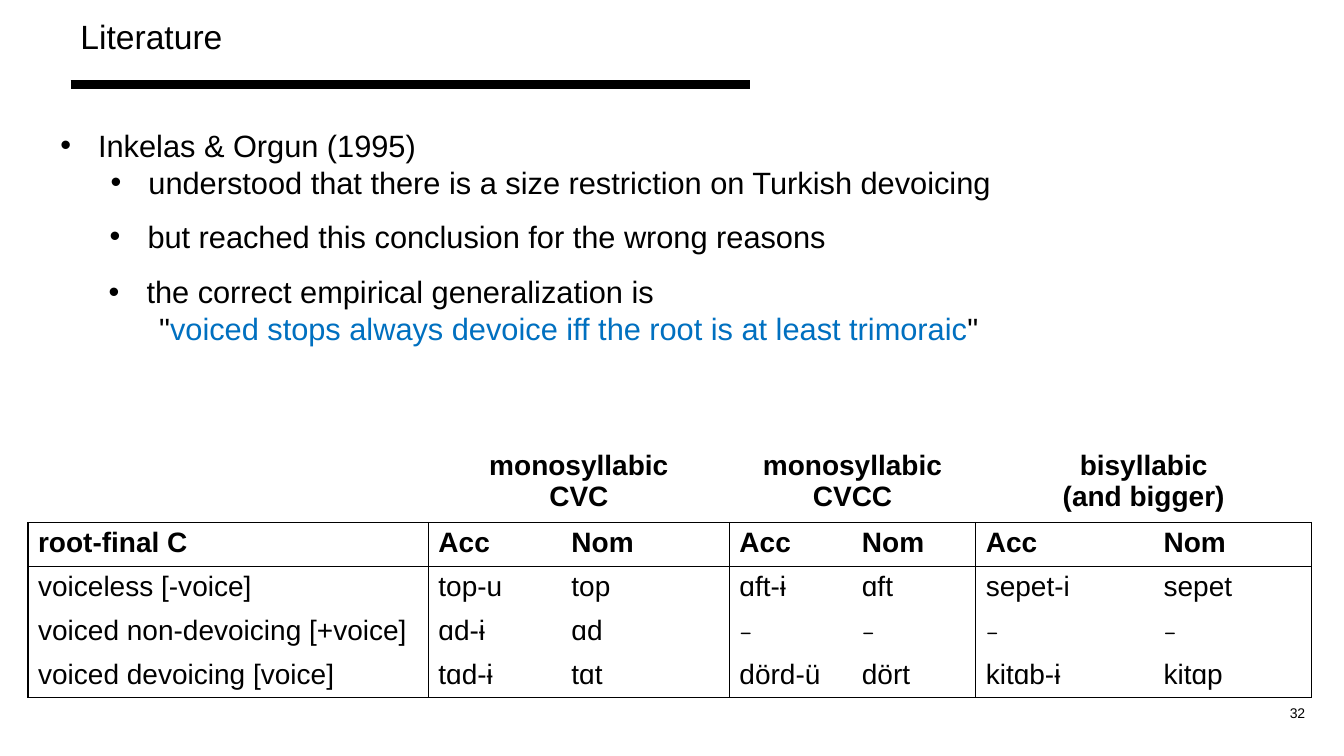
import pptx
import pptx.util
import pptx.dml.color
import pptx.enum.text
import pptx.enum.shapes
import lxml.etree
from dataclasses import dataclass

Pt = pptx.util.Pt
Color = pptx.dml.color.RGBColor.from_string
Align = pptx.enum.text.PP_ALIGN
Anchor = pptx.enum.text.MSO_ANCHOR
NS = "{http://schemas.openxmlformats.org/drawingml/2006/main}"


@dataclass(frozen=True)
class Theme:
    ink: str = "000000"
    blue: str = "0070C0"
    font: str = "Arial"
    dash: str = "Quicksand"
    title: int = 24
    body: int = 22
    grid: int = 20
    mark: int = 18
    foot: int = 10
    rule: int = 6
    edge: int = 1


T = Theme()


def write(para, text, size=T.body, font=T.font, color=T.ink, bold=False, align=None):
    """Add one run to a paragraph."""
    run = para.add_run()
    run.text = text
    run.font.size = Pt(size)
    run.font.name = font
    run.font.bold = bold
    run.font.color.rgb = Color(color)
    if align is not None:
        para.alignment = align


def indent(para, left, hang=0, bullet=False):
    props = para._p.get_or_add_pPr()
    props.set("marL", str(Pt(left)))
    props.set("indent", str(Pt(-hang)))
    if bullet:
        lxml.etree.SubElement(props, NS + "buFont").set("typeface", T.font)
        lxml.etree.SubElement(props, NS + "buChar").set("char", "•")


def frame(slide, box, anchor=Anchor.TOP):
    text = slide.shapes.add_textbox(*map(Pt, box)).text_frame
    text.word_wrap = True
    text.vertical_anchor = anchor
    return text


# Title with the heavy rule below it
def head(slide, box, title):
    left, top, width, height = box
    text = frame(slide, (left, top, width, 36))
    write(text.paragraphs[0], title, size=T.title)
    base = top + height
    kind = pptx.enum.shapes.MSO_CONNECTOR.STRAIGHT
    rule = slide.shapes.add_connector(kind, Pt(left), Pt(base), Pt(left + 485), Pt(base))
    rule.line.color.rgb = Color(T.ink)
    rule.line.width = Pt(T.rule)
    lxml.etree.SubElement(rule._element.spPr, NS + "effectLst")


# Bullet block: each line is (left indent, has bullet, [(text, color), ...])
def points(slide, box, lines):
    text = frame(slide, box)
    for i, (left, bullet, runs) in enumerate(lines):
        para = text.add_paragraph() if i else text.paragraphs[0]
        indent(para, left, 27 if bullet else 0, bullet)
        for words, color in runs:
            write(para, words, color=color)


# Table: group heads in the top row, framed rows below
def border(cell, edges):
    props = cell._tc.get_or_add_tcPr()
    for i, (side, drawn) in enumerate(edges):
        line = lxml.etree.Element(NS + "ln" + side, w=str(Pt(T.edge)))
        fill = lxml.etree.SubElement(line, NS + ("solidFill" if drawn else "noFill"))
        if drawn:
            lxml.etree.SubElement(fill, NS + "srgbClr").set("val", T.ink)
        props.insert(i, line)


def table(slide, box, cols, groups, rows):
    count = len(rows) + 1
    grid = slide.shapes.add_table(count, len(cols), *map(Pt, box)).table
    grid.first_row = grid.horz_banding = False
    for col, width in zip(grid.columns, cols):
        col.width = Pt(width)
    top = 55
    for r, row in enumerate(grid.rows):
        row.height = Pt((box[3] - top) / len(rows) if r else top)

    uprights, levels = {0, 1, 3, 5, 7}, {1, 2, count}
    for r in range(count):
        for c in range(len(cols)):
            cell = grid.cell(r, c)
            cell.fill.background()
            border(cell, [("L", r and c in uprights), ("R", r and c + 1 in uprights),
                          ("T", r in levels), ("B", r + 1 in levels)])
            if r:
                word = rows[r - 1][c]
                dash = word == "–"
                write(cell.text_frame.paragraphs[0], word, bold=r == 1,
                      size=T.mark if dash else T.grid, font=T.dash if dash else T.font)

    for g, lines in enumerate(groups):
        cell = grid.cell(0, 1 + 2 * g)
        cell.merge(grid.cell(0, 2 + 2 * g))
        for i, line in enumerate(lines):
            para = cell.text_frame.add_paragraph() if i else cell.text_frame.paragraphs[0]
            write(para, line, size=T.grid, bold=True, align=Align.CENTER)


# Slide number
def foot(slide, box, number):
    text = frame(slide, box, Anchor.BOTTOM)
    write(text.paragraphs[0], number, size=T.foot, align=Align.RIGHT)


def main():
    deck = pptx.Presentation()
    deck.slide_width, deck.slide_height = Pt(960), Pt(540)
    slide = deck.slides.add_slide(deck.slide_layouts[6])

    head(slide, (50.4, 8, 641, 52.5), "Literature")
    points(slide, (36, 87, 808, 60), [
        (27, True, [("Inkelas & Orgun (1995)", T.ink)]),
        (63, True, [("understood that there is a size restriction on Turkish devoicing", T.ink)]),
    ])
    points(slide, (35.3, 152, 853, 34), [
        (63, True, [("but reached this conclusion for the wrong reasons", T.ink)]),
    ])
    points(slide, (34.6, 191.5, 853, 60), [
        (63, True, [("the correct empirical generalization is", T.ink)]),
        (72, False, [('"', T.ink),
                     ("voiced stops always devoice iff the root is at least trimoraic", T.blue),
                     ('"', T.ink)]),
    ])
    table(slide, (20, 318, 917, 180), [286, 95, 120, 87.5, 88.5, 127, 113],
          [("monosyllabic", "CVC"), ("monosyllabic", "CVCC"), ("bisyllabic", "(and bigger)")],
          [["root-final C"] + ["Acc", "Nom"] * 3,
           ["voiceless [-voice]", "top-u", "top", "ɑft-ɨ", "ɑft", "sepet-i", "sepet"],
           ["voiced non-devoicing [+voice]", "ɑd-ɨ", "ɑd"] + ["–"] * 4,
           ["voiced devoicing [voice]", "tɑd-ɨ", "tɑt", "dörd-ü", "dört", "kitɑb-ɨ", "kitɑp"]])
    foot(slide, (824.4, 497, 115, 21.6), "32")
    deck.save("out.pptx")


if __name__ == "__main__":
    main()
